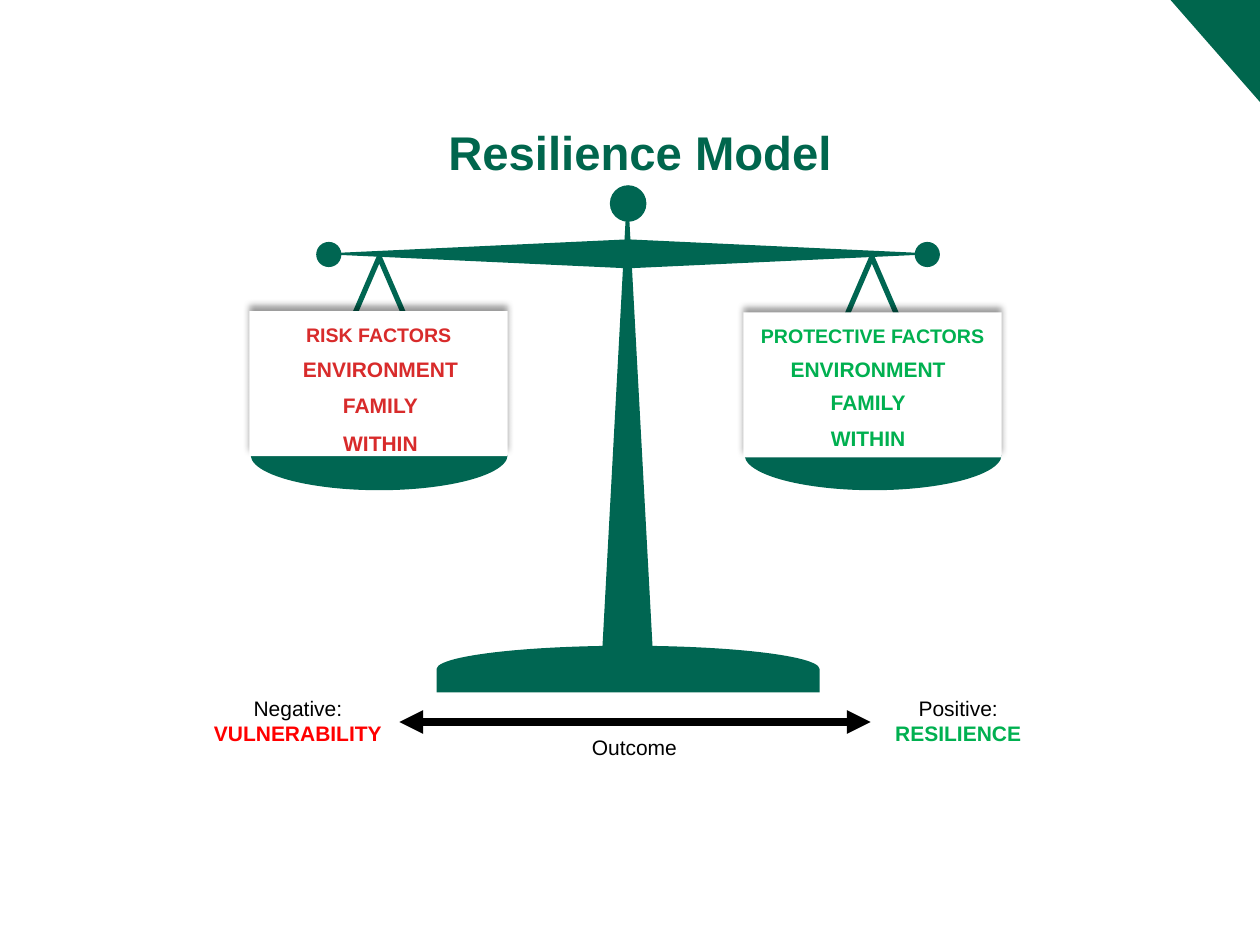
from lxml import etree
from pptx import Presentation, util as u
from pptx.dml.color import RGBColor
from pptx.enum import shapes, text
from pptx.oxml import parse_xml
from pptx.oxml.ns import nsdecls, qn

COLORS = {"scale": "006652", "accent": "00664D", "risk": "D82B2B", "protective": "00B050",
          "negative": "FF0000", "ink": "000000", "card": "FFFFFF"}
COLUMNS, ROWS = 100, 75
KIND = shapes.MSO_SHAPE
LABEL = {"size": 12, "color": "ink", "bold": False}
FACTOR = {"size": 12, "bold": True}
FRAME = {"word_wrap": True, "vertical_anchor": text.MSO_ANCHOR.TOP}


def rgb(name):
    return RGBColor.from_string(COLORS[name])


class Board:
    """Draws on one slide; lengths are columns and rows of a 100 x 75 grid."""
    font = "Arial"

    def __init__(self, deck):
        self.cell_w = deck.slide_width / COLUMNS
        self.cell_h = deck.slide_height / ROWS
        self.slide = deck.slides.add_slide(deck.slide_layouts[6])

    def place(self, *grid):
        steps = (self.cell_w, self.cell_h) * 2
        return [u.Emu(round(n * step)) for n, step in zip(grid, steps)]

    def shape(self, kind, at, fill=None, line=None, rotation=0, adjust=()):
        item = self.slide.shapes.add_shape(kind, *self.place(*at))
        item.shadow.inherit = False
        item.rotation = rotation
        for i, value in enumerate(adjust):
            item.adjustments[i] = value
        if fill:
            item.fill.solid()
            item.fill.fore_color.rgb = rgb(fill)
        else:
            item.fill.background()
        if line:
            item.line.color.rgb = rgb(line)
            item.line.width = u.Pt(3)
        else:
            item.line.fill.background()
        return item

    def set_text(self, holder, lines, **frame_format):
        """Each line is a (wording, format) pair."""
        frame = holder.text_frame
        for key, value in {**FRAME, **frame_format}.items():
            setattr(frame, key, value)
        for i, (wording, style) in enumerate(lines):
            paragraph = frame.add_paragraph() if i else frame.paragraphs[0]
            paragraph.alignment = text.PP_ALIGN.CENTER
            run = paragraph.add_run()
            run.text = wording
            font = {"name": self.font, "size": u.Pt(style["size"]), "bold": style["bold"]}
            for key, value in font.items():
                setattr(run.font, key, value)
            run.font.color.rgb = rgb(style["color"])

    def label(self, at, lines, **frame_format):
        self.set_text(self.slide.shapes.add_textbox(*self.place(*at)), lines, **frame_format)

    def card(self, at, heading, color):
        card = self.shape(KIND.RECTANGLE, at, "card")
        effects = card._element.spPr.find(qn("a:effectLst"))
        effects.append(parse_xml(
            f'<a:outerShdw {nsdecls("a")} blurRad="{u.Pt(4)}" dist="{u.Pt(3)}" dir="16200000" '
            f'algn="b" rotWithShape="0"><a:srgbClr val="{COLORS["ink"]}">'
            '<a:alpha val="40000"/></a:srgbClr></a:outerShdw>'))
        self.set_text(card, [(heading, {"size": 11.2, "color": color, "bold": True})],
                      margin_left=u.Inches(0.07), margin_right=u.Inches(0.07),
                      margin_top=u.Inches(0.09))

    def double_arrow(self, x1, x2, y):
        arrow = self.slide.shapes.add_connector(
            shapes.MSO_CONNECTOR.STRAIGHT, *self.place(x1, y, x2, y))
        arrow.line.width = u.Pt(4.5)
        arrow.line.color.rgb = rgb("ink")
        for end in ("headEnd", "tailEnd"):
            etree.SubElement(arrow.line._get_or_add_ln(), qn(f"a:{end}"), type="triangle")
        etree.SubElement(arrow._element.spPr, qn("a:effectLst"))


def main():
    deck = Presentation()
    deck.slide_width, deck.slide_height = u.Inches(10), u.Inches(7.5)
    board = Board(deck)

    # Corner accent
    board.shape(KIND.RIGHT_TRIANGLE, (92.9, 0, 7.1, 8.1), "accent", rotation=180)

    # Scale: hangers, post, base, beam and knobs
    for x in (62.3, 23.2):
        board.shape(KIND.ISOSCELES_TRIANGLE, (x, 20.4, 13.8, 16), line="scale")
    board.shape(KIND.ISOSCELES_TRIANGLE, (47.7, 14.7, 4.2, 38.7), "scale")
    board.shape(KIND.FLOWCHART_DELAY, (48, 37.9, 3.7, 30.4), "scale", rotation=270)
    board.shape(KIND.OVAL, (48.4, 14.7, 2.9, 2.9), "scale")
    board.shape(KIND.DIAMOND, (25.1, 19, 49.5, 2.3), "scale")
    for x in (25.1, 72.6):
        board.shape(KIND.OVAL, (x, 19.2, 2, 2), "scale")
    for x in (27.3, 66.5):
        board.shape(KIND.CHORD, (x, 25.9, 5.6, 20.4), "scale", rotation=270,
                    adjust=(53.98, 161.77))

    # Outcome axis
    board.double_arrow(31.7, 69.1, 57.3)
    board.label((42.3, 57.8, 16.1, 3), [("Outcome", LABEL)])
    for x, side, result, color in ((15.6, "Negative:", "VULNERABILITY", "negative"),
                                   (68, "Positive:", "RESILIENCE", "protective")):
        board.label((x, 54.7, 16.1, 5), [(side, LABEL), (result, {**FACTOR, "color": color})],
                    vertical_anchor=text.MSO_ANCHOR.MIDDLE)

    # Title
    board.label((33.5, 9.4, 34.6, 6.1),
                [("Resilience Model", {"size": 27, "color": "accent", "bold": True})],
                margin_left=0, margin_right=0, margin_top=u.Inches(0.04))

    # Factors on each pan
    for card_x, card_y, heading, color, factor_x, factor_rows in (
            (19.8, 24.7, "RISK FACTORS", "risk", 21.1, (27.8, 30.7, 33.7)),
            (59, 24.8, "PROTECTIVE FACTORS", "protective", 59.8, (27.8, 30.4, 33.3))):
        board.card((card_x, card_y, 20.5, 11.5), heading, color)
        for y, factor in zip(factor_rows, ("ENVIRONMENT", "FAMILY", "WITHIN")):
            board.label((factor_x, y, 18.2, 3), [(factor, {**FACTOR, "color": color})])

    deck.save("out.pptx")


if __name__ == "__main__":
    main()
